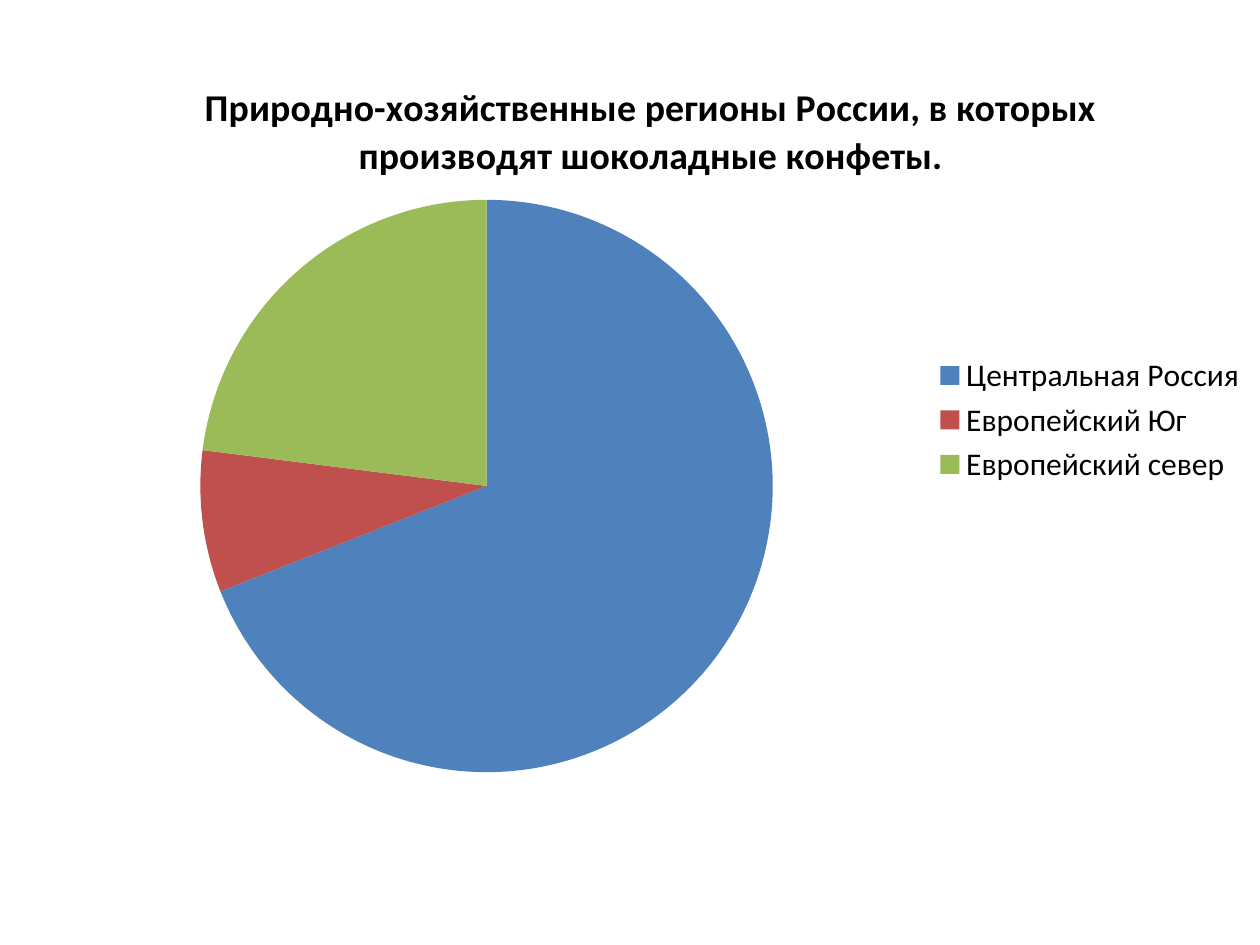
import pptx
import pptx.chart.data
import pptx.dml.color
import pptx.enum.chart
import pptx.oxml
import pptx.oxml.ns
import pptx.util

Pt = pptx.util.Pt
FONT = "Calibri"
COLORS = {"text": "000000", "center": "4F81BD", "south": "C0504D", "north": "9BBB59"}
TITLE = "Природно-хозяйственные регионы России, в которых производят шоколадные конфеты."
REGIONS = [
    ("Центральная Россия", 69, "center"),
    ("Европейский Юг", 8, "south"),
    ("Европейский север", 23, "north"),
]


def rgb(name):
    return pptx.dml.color.RGBColor.from_string(COLORS[name])


def format_font(font, size, bold=False):
    font.name = FONT
    font.size = Pt(size)
    font.bold = bold
    font.color.rgb = rgb("text")


def place_plot(chart, x, y, width, height):
    """Fix the plot area, in fractions of the chart box."""
    plot_area = chart.plots[0]._element.getparent()
    for old in plot_area.findall(pptx.oxml.ns.qn("c:layout")):
        plot_area.remove(old)
    sides = "".join(
        f'<c:{tag} val="{value}"/>'
        for tag, value in [("x", x), ("y", y), ("w", width), ("h", height)]
    )
    layout = pptx.oxml.parse_xml(
        f'<c:layout {pptx.oxml.ns.nsdecls("c")}><c:manualLayout>'
        '<c:layoutTarget val="inner"/><c:xMode val="edge"/><c:yMode val="edge"/>'
        f"{sides}</c:manualLayout></c:layout>"
    )
    plot_area.insert(0, layout)


def add_region_pie(page, left, top, width, height):
    data = pptx.chart.data.CategoryChartData()
    data.categories = [name for name, _, _ in REGIONS]
    data.add_series("Series 1", [value for _, value, _ in REGIONS])
    chart = page.shapes.add_chart(
        pptx.enum.chart.XL_CHART_TYPE.PIE,
        Pt(left), Pt(top), Pt(width), Pt(height), data,
    ).chart
    format_font(chart.font, 18)

    # Title
    chart.has_title = True
    para = chart.chart_title.text_frame.paragraphs[0]
    para.text = TITLE
    format_font(para.runs[0].font, 21.6, bold=True)

    # Legend
    chart.has_legend = True
    chart.legend.position = pptx.enum.chart.XL_LEGEND_POSITION.RIGHT
    chart.legend.include_in_layout = True
    format_font(chart.legend.font, 18)

    # Slices
    plot = chart.plots[0]
    plot.vary_by_categories = True
    for index, (_, _, color) in enumerate(REGIONS):
        fill = plot.series[0].points[index].format.fill
        fill.solid()
        fill.fore_color.rgb = rgb(color)
    place_plot(chart, 0.13, 0.2, 0.47, 0.78)


def main():
    deck = pptx.Presentation()
    deck.slide_width, deck.slide_height = Pt(720), Pt(540)
    page = deck.slides.add_slide(deck.slide_layouts[6])
    add_region_pie(page, 24, 30, 696, 420)
    deck.save("out.pptx")


if __name__ == "__main__":
    main()
